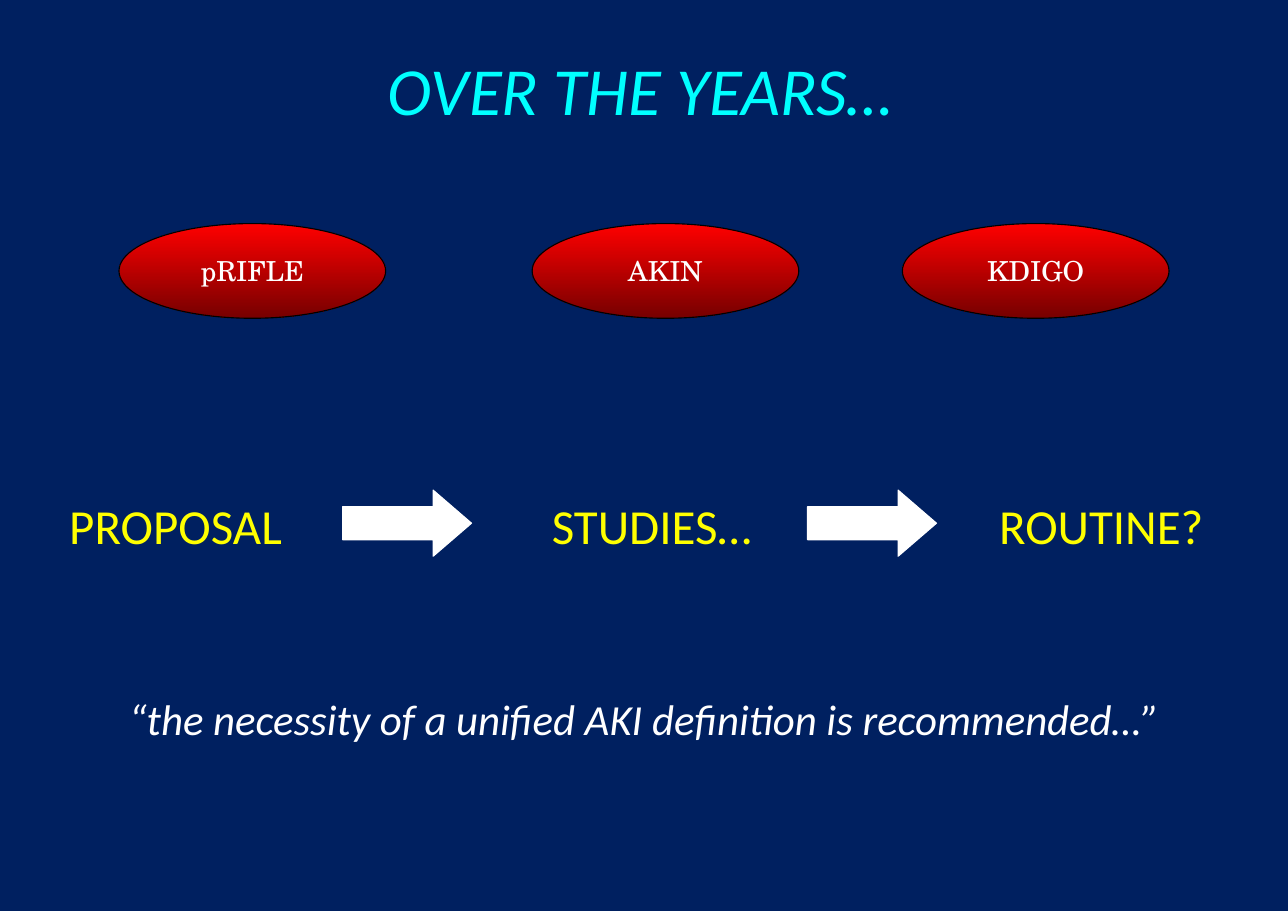
from pptx import Presentation
from pptx import util as u
from pptx.dml.color import RGBColor
from pptx.enum import shapes, text

NAVY = RGBColor(0x00, 0x20, 0x60)
CYAN = RGBColor(0x00, 0xFF, 0xFF)
YELLOW = RGBColor(0xFF, 0xFF, 0x00)
WHITE = RGBColor(0xFF, 0xFF, 0xFF)
BLACK = RGBColor(0x00, 0x00, 0x00)
RED = RGBColor(0xFF, 0x00, 0x00)
DARK_RED = RGBColor(0x76, 0x00, 0x00)


class Deck:
    """Holds the style and the current slide."""
    body_font = "Calibri"
    oval_font = "TeX Gyre Schola"

    def __init__(self, width, height):
        self.prs = Presentation()
        self.prs.slide_width = u.Inches(width)
        self.prs.slide_height = u.Inches(height)
        self.s = self.prs.slides.add_slide(self.prs.slide_layouts[6])
        fill = self.s.background.fill
        fill.solid()
        fill.fore_color.rgb = NAVY

    def add_words(self, sp, words, color, align, **fmt):
        p = sp.text_frame.paragraphs[0]
        p.alignment = align
        r = p.add_run()
        r.text = words
        r.font.color.rgb = color
        for name, value in fmt.items():
            setattr(r.font, name, value)

    def label(self, box, words, size, color, italic=False, wrap=False,
              align=text.PP_ALIGN.LEFT):
        sp = self.s.shapes.add_textbox(*map(u.Inches, box))
        sp.text_frame.word_wrap = wrap
        sp.text_frame.auto_size = text.MSO_AUTO_SIZE.SHAPE_TO_FIT_TEXT
        self.add_words(sp, words, color, align, name=self.body_font,
                       size=u.Pt(size), italic=italic)

    def shape(self, kind, box, line):
        sp = self.s.shapes.add_shape(kind, *map(u.Inches, box))
        sp.shadow.inherit = False
        sp.line.color.rgb = line
        sp.line.width = u.Pt(0.75)
        return sp

    def oval(self, box, words):
        sp = self.shape(shapes.MSO_SHAPE.OVAL, box, BLACK)
        sp.fill.gradient()
        sp.fill.gradient_angle = 270
        for stop, color in zip(sp.fill.gradient_stops, (RED, DARK_RED)):
            stop.color.rgb = color
        tf = sp.text_frame
        frame = dict(word_wrap=False, vertical_anchor=text.MSO_ANCHOR.MIDDLE,
                     margin_left=u.Inches(0.11), margin_right=u.Inches(0.11),
                     margin_top=u.Inches(0.06), margin_bottom=u.Inches(0.06))
        for name, value in frame.items():
            setattr(tf, name, value)
        self.add_words(sp, words, WHITE, text.PP_ALIGN.CENTER,
                       name=self.oval_font, size=u.Pt(18))

    def arrow(self, box):
        sp = self.shape(shapes.MSO_SHAPE.RIGHT_ARROW, box, WHITE)
        sp.fill.solid()
        sp.fill.fore_color.rgb = WHITE
        sp.adjustments[1] = 0.58


def main():
    deck = Deck(11.69, 8.27)

    # Title
    deck.label((3.42, 0.39, 4.85, 0.84), "OVER THE YEARS…", 44, CYAN, italic=True)

    # Definitions
    for left, words in ((1.08, "pRIFLE"), (4.83, "AKIN"), (8.19, "KDIGO")):
        deck.oval((left, 2.03, 2.42, 0.86), words)

    # Stages, joined by arrows
    stage_top = 4.45
    for left, width, words in ((0.53, 2.15, "PROPOSAL"),
                               (4.91, 2.04, "STUDIES…"),
                               (8.97, 2.08, "ROUTINE?")):
        deck.label((left, stage_top, width, 0.64), words, 32, YELLOW)
    for left in (3.11, 7.33):
        deck.arrow((left, stage_top, 1.17, 0.6))

    # Closing quote
    deck.label((1, 6.24, 9.69, 0.57),
               "“the necessity of a unified AKI definition is recommended…”",
               28, WHITE, italic=True, wrap=True, align=text.PP_ALIGN.CENTER)

    deck.prs.save("out.pptx")


if __name__ == "__main__":
    main()
